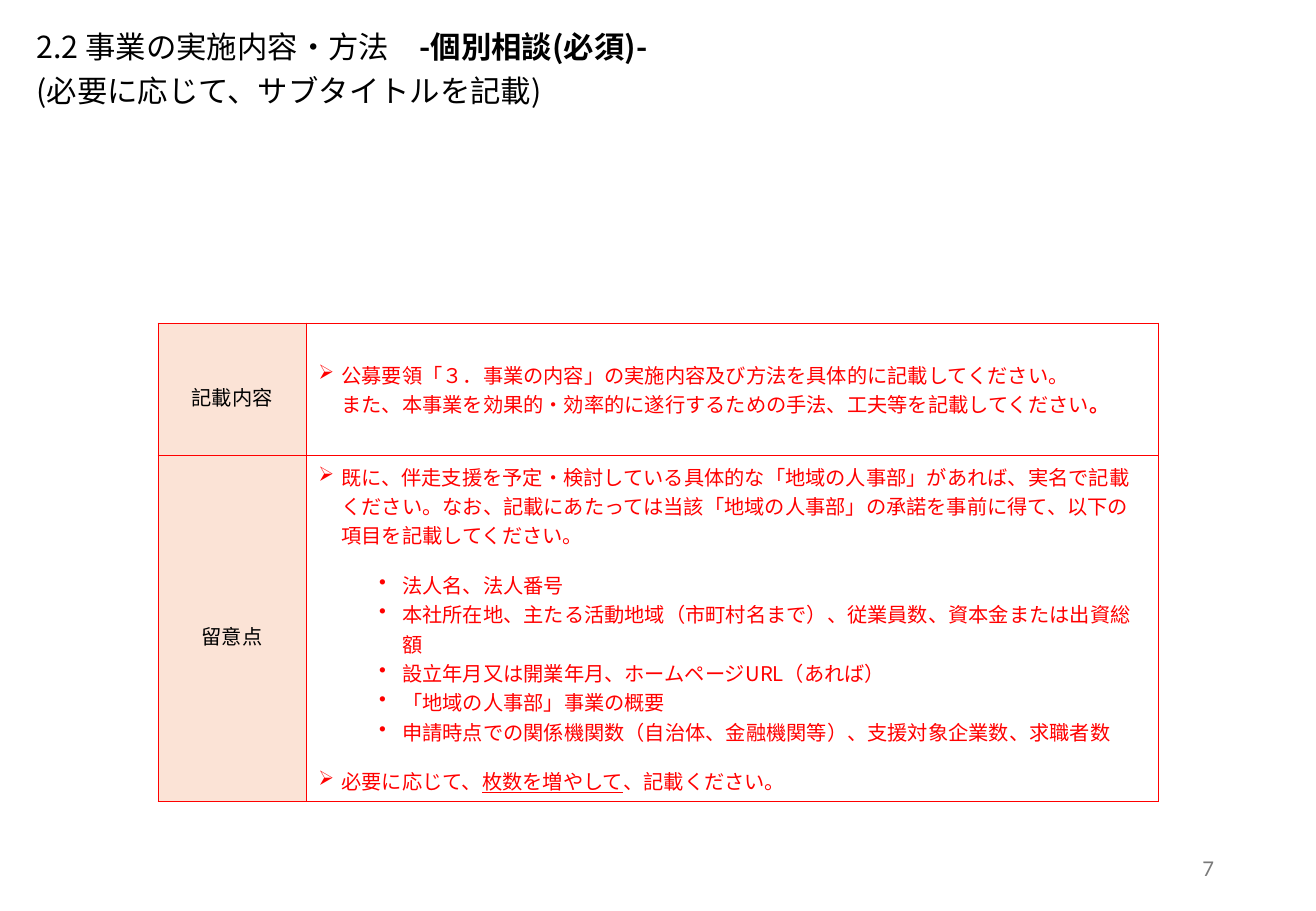
from dataclasses import dataclass

from lxml.etree import SubElement
from pptx import Presentation
from pptx.dml.color import RGBColor as RGB
from pptx.enum.text import MSO_ANCHOR as Anchor, MSO_AUTO_SIZE as AutoSize, PP_ALIGN as Align
from pptx.oxml.ns import qn
from pptx.util import Inches, Pt


@dataclass(frozen=True)
class Theme:
    text_font: str = "Noto Sans CJK JP"
    number_font: str = "Lato"
    title_size: int = 18
    body_size: int = 12
    ink: str = "000000"
    accent: str = "FF0000"
    muted: str = "797979"
    label_fill: str = "FBE3D6"
    note_fill: str = "FFFFFF"
    border: float = 0.5


# Content: a paragraph is a kind and its runs, a run is text and its format
HEADING = [
    [("2.2 事業の実施内容・方法　", {}), ("-個別相談(必須)-", {"bold": True})],
    [("(必要に応じて、サブタイトルを記載)", {})],
]
CORPORATE_ITEMS = [
    "法人名、法人番号",
    "本社所在地、主たる活動地域（市町村名まで）、従業員数、資本金または出資総額",
    "設立年月又は開業年月、ホームページURL（あれば）",
    "「地域の人事部」事業の概要",
    "申請時点での関係機関数（自治体、金融機関等）、支援対象企業数、求職者数",
]
GUIDE_ROWS = [
    ("記載内容", [
        ("point", [
            ("公募要領「３．事業の内容」の実施内容及び方法を具体的に記載してください。\n"
             "また、本事業を効果的・効率的に遂行するための手法、工夫等を記載してください", {}),
            ("。", {"bold": True})]),
    ]),
    ("留意点", [
        ("point", [
            ("既に、伴走支援を予定・検討している具体的な「地域の人事部」があれば、実名で記載ください。"
             "なお、記載にあたっては当該「地域の人事部」の承諾を事前に得て、以下の項目を記載してください。", {})]),
        *[("item", [(item, {})]) for item in CORPORATE_ITEMS[:-1]],
        ("last item", [(CORPORATE_ITEMS[-1], {})]),
        ("point", [("必要に応じて、", {}), ("枚数を増やして", {"underline": True}),
                   ("、記載ください。", {})]),
    ]),
]
# Kind: bullet, level, left margin in inches, space after in points
KINDS = {
    "point": ("➢", 0, 0.19, 12),
    "item": ("•", 1, 0.69, 0),
    "last item": ("•", 1, 0.69, 12),
}
HANGING = 0.19
COLUMN_WIDTHS = (1.22, 7.01)
ROW_HEIGHTS = (1.09, 2.85)


class GuideSlide:
    def __init__(self, deck, theme):
        self.theme = theme
        self.slide = deck.slides.add_slide(deck.slide_layouts[5])

    def add_runs(self, paragraph, runs, size, color, font=None):
        font = font or self.theme.text_font
        for text, extras in runs:
            for index, line in enumerate(text.split("\n")):
                if index:
                    paragraph.add_line_break()
                run = paragraph.add_run()
                run.text = line
                formats = {"name": font, "size": Pt(size), "bold": False, **extras}
                for key, value in formats.items():
                    setattr(run.font, key, value)
                run.font.color.rgb = RGB.from_string(color)
                SubElement(run.font._element, qn("a:ea"), typeface=font)

    def heading(self, box, lines):
        title = self.slide.shapes.title
        for key, value in zip(("left", "top", "width", "height"), box):
            setattr(title, key, Inches(value))
        frame = title.text_frame
        for key, value in {"auto_size": AutoSize.NONE, "word_wrap": True,
                           "vertical_anchor": Anchor.TOP}.items():
            setattr(frame, key, value)
        for index, runs in enumerate(lines):
            paragraph = frame.add_paragraph() if index else frame.paragraphs[0]
            formats = {"alignment": Align.LEFT, "line_spacing": 0.8,
                       "space_before": Pt(9 if index else 0)}
            for key, value in formats.items():
                setattr(paragraph, key, value)
            self.add_runs(paragraph, runs, self.theme.title_size, self.theme.ink)

    def page_number(self, box, number):
        frame = self.slide.shapes.add_textbox(*map(Inches, box)).text_frame
        frame.word_wrap = True
        frame.vertical_anchor = Anchor.MIDDLE
        paragraph = frame.paragraphs[0]
        paragraph.alignment = Align.RIGHT
        self.add_runs(paragraph, [(number, {})], self.theme.body_size,
                      self.theme.muted, self.theme.number_font)

    def style_cell(self, cell, fill):
        properties = cell._tc.get_or_add_tcPr()
        for side in ("lnL", "lnR", "lnT", "lnB"):
            line = SubElement(properties, qn(f"a:{side}"), w=str(Pt(self.theme.border)))
            solid = SubElement(line, qn("a:solidFill"))
            SubElement(solid, qn("a:srgbClr"), val=self.theme.accent)
        cell.fill.solid()
        cell.fill.fore_color.rgb = RGB.from_string(fill)
        cell.vertical_anchor = Anchor.MIDDLE

    def label(self, cell, text):
        self.style_cell(cell, self.theme.label_fill)
        paragraph = cell.text_frame.paragraphs[0]
        paragraph.alignment = Align.CENTER
        paragraph.line_spacing = 1.5
        self.add_runs(paragraph, [(text, {})], self.theme.body_size, self.theme.ink)

    def notes(self, cell, paragraphs):
        self.style_cell(cell, self.theme.note_fill)
        frame = cell.text_frame
        for index, (kind, runs) in enumerate(paragraphs):
            bullet, level, margin, after = KINDS[kind]
            paragraph = frame.add_paragraph() if index else frame.paragraphs[0]
            properties = paragraph._p.get_or_add_pPr()
            properties.set("marL", str(Inches(margin)))
            properties.set("indent", str(Inches(-HANGING)))
            SubElement(properties, qn("a:buChar"), char=bullet)
            paragraph.level = level
            paragraph.space_after = Pt(after)
            self.add_runs(paragraph, runs, self.theme.body_size, self.theme.accent)

    def guide_table(self, left, top, rows):
        table = self.slide.shapes.add_table(
            len(rows), len(COLUMN_WIDTHS), Inches(left), Inches(top),
            Inches(sum(COLUMN_WIDTHS)), Inches(sum(ROW_HEIGHTS))).table
        table.first_row = table.horz_banding = False
        for column, width in zip(table.columns, COLUMN_WIDTHS):
            column.width = Inches(width)
        for index, (label, paragraphs) in enumerate(rows):
            table.rows[index].height = Inches(ROW_HEIGHTS[index])
            self.label(table.cell(index, 0), label)
            self.notes(table.cell(index, 1), paragraphs)


def main():
    deck = Presentation()
    deck.slide_width, deck.slide_height = Inches(10.83), Inches(7.5)
    page = GuideSlide(deck, Theme())
    # Heading with subtitle line
    page.heading((0.2, 0.24, 10.43, 0.39), HEADING)
    # Writing guide
    page.guide_table(1.3, 2.66, GUIDE_ROWS)
    # Page number
    page.page_number((7.65, 6.95, 2.44, 0.4), "7")
    deck.save("out.pptx")


if __name__ == "__main__":
    main()
